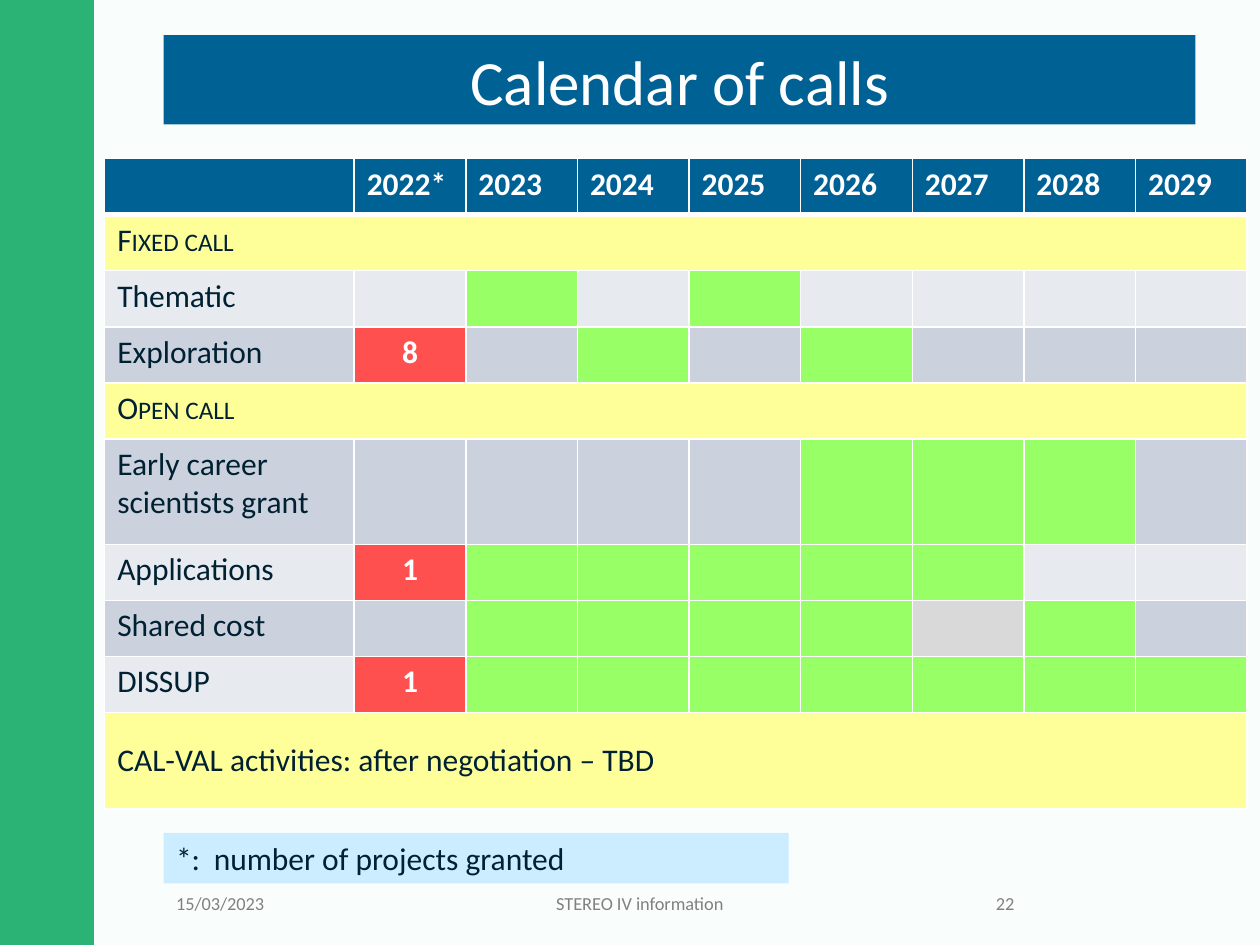
from dataclasses import dataclass

from lxml import etree
from pptx import Presentation, util as u
from pptx.dml.color import RGBColor
from pptx.enum import shapes, text
from pptx.oxml.ns import qn

LEFT, MID, RIGHT = text.PP_ALIGN.LEFT, text.PP_ALIGN.CENTER, text.PP_ALIGN.RIGHT


@dataclass(frozen=True)
class Theme:
    font: str = "Calibri"
    back: str = "CAFBED"
    side: str = "03A158"
    white: str = "FFFFFF"
    navy: str = "006195"
    ink: str = "002133"
    dim: str = "808080"
    band: str = "FFFF99"
    light: str = "E7EAEF"
    dark: str = "CCD2DD"
    green: str = "99FF66"
    red: str = "FF5050"
    grey: str = "D9D9D9"
    note: str = "CCECFF"
    head: float = 36
    body: float = 18
    foot: float = 10.5


class Deck:
    def __init__(self, theme):
        self.theme = theme
        self.prs = Presentation()
        self.prs.slide_width, self.prs.slide_height = u.Cm(25.4), u.Cm(19.05)
        self.slide = self.prs.slides.add_slide(self.prs.slide_layouts[5])
        self.paint(self.slide.background.fill, theme.back)

    def paint(self, fill, color):
        fill.solid()
        fill.fore_color.rgb = RGBColor.from_string(color)

    def put(self, frame, words, size, color, align=LEFT, bold=False, tab=None):
        par = frame.paragraphs[0]
        par.text = words
        par.alignment = align
        if tab:
            tabs = etree.SubElement(par._p.get_or_add_pPr(), qn("a:tabLst"))
            etree.SubElement(tabs, qn("a:tab"), pos=str(u.Cm(tab)), algn="l")
        font = par.font
        font.name, font.size, font.bold = self.theme.font, u.Pt(size), bold
        font.color.rgb = RGBColor.from_string(color)
        return par

    def title(self, words, box):
        shape = self.slide.shapes.title
        shape.left, shape.top, shape.width, shape.height = map(u.Cm, box)
        self.paint(shape.fill, self.theme.navy)
        shape.text_frame.vertical_anchor = text.MSO_ANCHOR.MIDDLE
        self.put(shape.text_frame, words, self.theme.head, self.theme.white, MID)

    def rect(self, box, color, alpha=100):
        kind = shapes.MSO_SHAPE.RECTANGLE
        shape = self.slide.shapes.add_shape(kind, *map(u.Cm, box))
        shape.shadow.inherit = False
        shape.line.fill.background()
        self.paint(shape.fill, color)
        if alpha < 100:
            tint = shape._element.spPr.find(".//" + qn("a:srgbClr"))
            etree.SubElement(tint, qn("a:alpha"), val=str(alpha * 1000))
        return shape

    def label(self, words, box, align):
        frame = self.slide.shapes.add_textbox(*map(u.Cm, box)).text_frame
        frame.word_wrap = True
        frame.vertical_anchor = text.MSO_ANCHOR.MIDDLE
        self.put(frame, words, self.theme.foot, self.theme.dim, align)

    def edge(self, cell, top, base):
        props = cell._tc.get_or_add_tcPr()
        for i, (side, width) in enumerate(zip("LRTB", (1, 1, top, base))):
            line = etree.Element(qn(f"a:ln{side}"), w=str(u.Pt(width)))
            fill = etree.SubElement(line, qn("a:solidFill"))
            etree.SubElement(fill, qn("a:srgbClr"), val=self.theme.white)
            props.insert(i, line)

    def table(self, spot, cols, rows):
        shape = self.slide.shapes.add_table(
            len(rows), len(cols), *map(u.Cm, spot),
            u.Cm(sum(cols)), u.Cm(sum(rows)))
        grid = shape.table
        grid.horz_banding = False
        for col, width in zip(grid.columns, cols):
            col.width = u.Cm(width)
        for row, height in zip(grid.rows, rows):
            row.height = u.Cm(height)
        return grid

    def cell(self, cell, words, fill, color, align=LEFT, bold=False, top=1, base=1):
        self.paint(cell.fill, fill)
        self.edge(cell, top, base)
        return self.put(cell.text_frame, words, self.theme.body, color, align, bold)


# Marks per year: g = open, x = greyed, digit = projects granted, . = none
YEARS = ["2022*", *map(str, range(2023, 2030))]
CALLS = [
    ("Fixed call", None),
    ("Thematic", ".g.g...."),
    ("Exploration", "8.g.g..."),
    ("Open call", None),
    ("Early career scientists grant", "....ggg."),
    ("Applications", "1ggggg.."),
    ("Shared cost", ".ggggxg."),
    ("DISSUP", "1ggggggg"),
    ("CAL-VAL activities: after negotiation – TBD", None),
]


def calendar(deck):
    t = deck.theme
    high = [1.13] * 5 + [2.13] + [1.13] * 3 + [1.95]
    grid = deck.table((2.11, 3.2), [5.03] + [2.25] * len(YEARS), high)

    # Year header
    for c, year in enumerate(["", *YEARS]):
        deck.cell(grid.cell(0, c), year, t.navy, t.white, bold=True, base=3)

    for r, (name, marks) in enumerate(CALLS, 1):
        top = 3 if r == 1 else 1
        # Section bands across all years
        if marks is None:
            for c in range(len(YEARS) + 1):
                par = deck.cell(grid.cell(r, c), "" if c else name, t.band, t.ink, top=top)
                if c == 0 and name.endswith("call"):
                    par.runs[0]._r.get_or_add_rPr().set("cap", "small")
            grid.cell(r, 0).merge(grid.cell(r, len(YEARS)))
            continue
        # Call name and its years
        base = t.dark if r % 2 else t.light
        deck.cell(grid.cell(r, 0), name, base, t.ink)
        tones = {".": base, "g": t.green, "x": t.grey}
        for c, mark in enumerate(marks, 1):
            words = mark if mark.isdigit() else ""
            deck.cell(grid.cell(r, c), words, tones.get(mark, t.red), t.white, MID, True)
    grid.cell(len(CALLS), 0).vertical_anchor = text.MSO_ANCHOR.MIDDLE


def main():
    t = Theme()
    deck = Deck(t)

    # Side bar and pale page, behind the title
    tree = deck.slide.shapes._spTree
    side = deck.rect((0, 0, 1.9, 19.05), t.side, 80)
    page = deck.rect((1.9, 0, 23.5, 19.05), t.white, 90)
    for i, shape in enumerate((side, page), 2):
        tree.insert(i, shape._element)

    deck.title("Calendar of calls", (3.3, 0.71, 20.8, 1.8))
    calendar(deck)

    # Footer
    deck.label("15/03/2023", (3.3, 17.7, 3, 1.02), LEFT)
    deck.label("STEREO IV information", (6.5, 17.7, 12.8, 1.02), MID)
    deck.label("22", (19.51, 17.7, 1.19, 1.02), RIGHT)

    # Footnote
    note = deck.rect((3.3, 16.79, 12.6, 1.02), t.note).text_frame
    note.word_wrap = True
    note.vertical_anchor = text.MSO_ANCHOR.MIDDLE
    deck.put(note, "*:\tnumber of projects granted", t.body, t.ink, tab=0.76)

    deck.prs.save("out.pptx")


if __name__ == "__main__":
    main()
